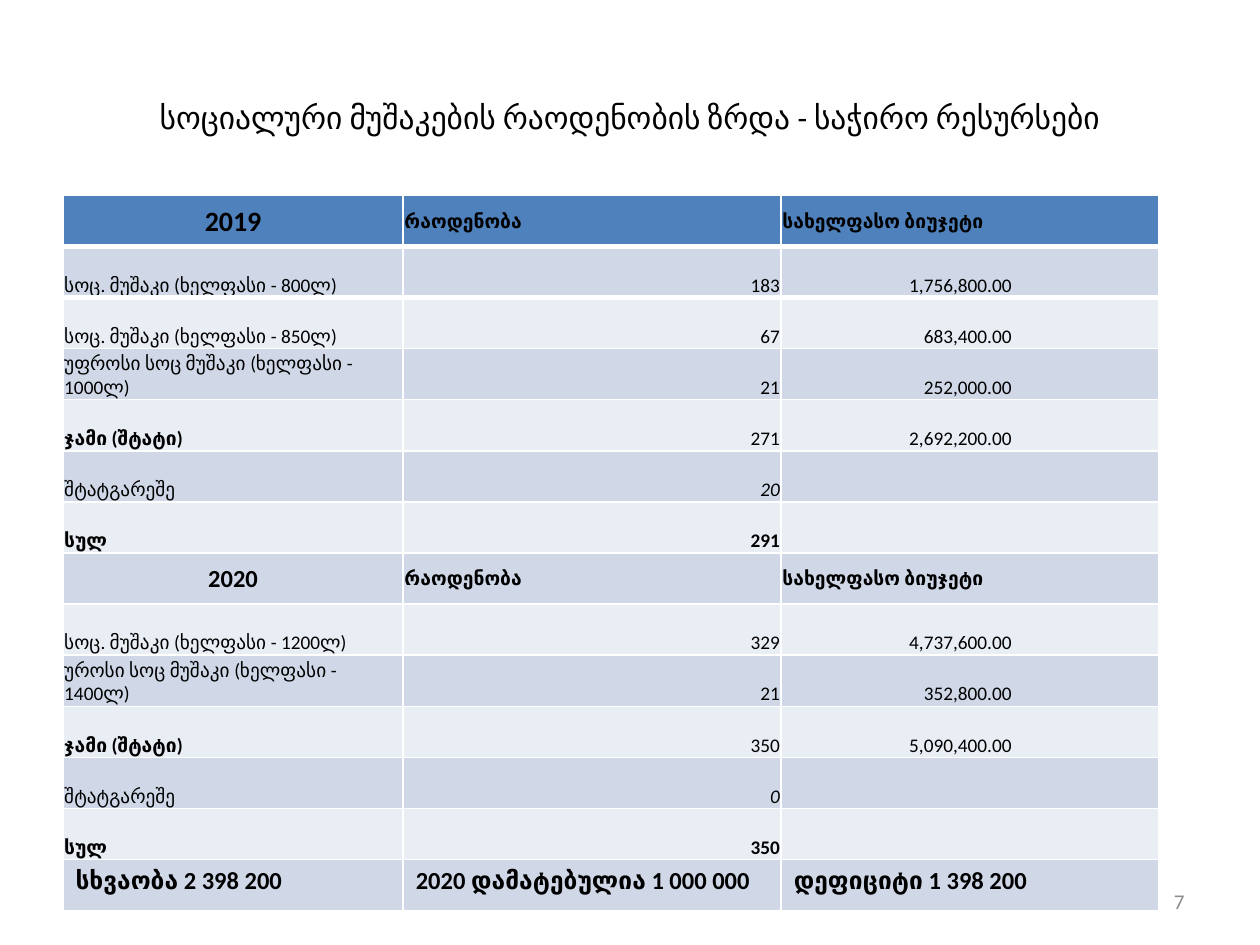
from dataclasses import dataclass

from lxml.etree import SubElement
from pptx import Presentation
from pptx.dml.color import RGBColor
from pptx.enum.text import MSO_ANCHOR, PP_ALIGN
from pptx.oxml import parse_xml
from pptx.oxml.ns import nsdecls, qn
from pptx.util import Inches, Pt


@dataclass(frozen=True)
class Theme:
    """Colours and type sizes of the slide."""
    font: str = "Calibri"
    text: str = "000000"
    muted: str = "8C8C8C"
    header: str = "4F81BD"
    bands: tuple = ("E9EDF4", "D0D8E8")
    rule: str = "FFFFFF"
    title_size: int = 18
    year_size: int = 16
    section_size: int = 14
    number_size: int = 12
    body_size: int = 11


THEME = Theme()
COLUMN_WIDTHS = (2.7, 3, 3)
AMOUNT_INDENT = 1.17
HEADINGS = ("რაოდენობა", "სახელფასო ბიუჯეტი")
ROWS = [
    ("year", "2019", *HEADINGS),
    ("staff", "სოც. მუშაკი (ხელფასი - 800ლ)", "183", "1,756,800.00"),
    ("staff", "სოც. მუშაკი (ხელფასი - 850ლ)", "67", "683,400.00"),
    ("staff", "უფროსი სოც მუშაკი (ხელფასი - 1000ლ)", "21", "252,000.00"),
    ("subtotal", "ჯამი (შტატი)", "271", "2,692,200.00"),
    ("external", "შტატგარეშე", "20", ""),
    ("total", "სულ", "291", ""),
    ("year", "2020", *HEADINGS),
    ("staff", "სოც. მუშაკი (ხელფასი - 1200ლ)", "329", "4,737,600.00"),
    ("staff", "უროსი სოც მუშაკი (ხელფასი - 1400ლ)", "21", "352,800.00"),
    ("subtotal", "ჯამი (შტატი)", "350", "5,090,400.00"),
    ("external", "შტატგარეშე", "0", ""),
    ("total", "სულ", "350", ""),
    ("summary", "სხვაობა 2 398 200", "2020 დამატებულია 1 000 000", "დეფიციტი 1 398 200"),
]


def write(frame, text, size, color=THEME.text, align=PP_ALIGN.LEFT, bold=False, italic=False):
    """Put one formatted paragraph into a text frame."""
    paragraph = frame.paragraphs[0]
    paragraph.text = text
    paragraph.alignment = align
    font = paragraph.font
    font.name, font.size = THEME.font, Pt(size)
    font.bold, font.italic = bold, italic
    font.color.rgb = RGBColor.from_string(color)


def add_title(slide, text):
    """Place and format the title placeholder."""
    title = slide.shapes.title
    title.left, title.top = Inches(0.5), Inches(0.3)
    title.width, title.height = Inches(9), Inches(1.25)
    title.text_frame.vertical_anchor = MSO_ANCHOR.MIDDLE
    write(title.text_frame, text, THEME.title_size, align=PP_ALIGN.CENTER)


def add_slide_number(slide, number):
    """Add the slide number at the lower right."""
    box = slide.shapes.add_textbox(Inches(7.17), Inches(6.95), Inches(2.33), Inches(0.4))
    box.text_frame.word_wrap = True
    box.text_frame.vertical_anchor = MSO_ANCHOR.MIDDLE
    write(box.text_frame, number, THEME.number_size, THEME.muted, PP_ALIGN.RIGHT)


def set_border(cell, side, width):
    """Draw one cell border in the rule colour."""
    line = parse_xml(f'<a:{side} {nsdecls("a")} w="{Pt(width)}"/>')
    fill = SubElement(line, qn("a:solidFill"))
    SubElement(fill, qn("a:srgbClr"), val=THEME.rule)
    cell._tc.get_or_add_tcPr().insert(0, line)


def fill_cell(cell, kind, row, column, text):
    """Fill and format a table cell by its row kind and column."""
    cell.fill.solid()
    color = THEME.bands[row % 2] if row else THEME.header
    if kind == "summary":
        color = THEME.bands[1]
    cell.fill.fore_color.rgb = RGBColor.from_string(color)
    size, align = THEME.body_size, PP_ALIGN.LEFT
    bold = kind in ("year", "summary")
    if kind == "summary":
        size = THEME.section_size
    else:
        cell.margin_left = cell.margin_right = cell.margin_top = Inches(0.01)
        cell.margin_bottom = 0
        cell.vertical_anchor = MSO_ANCHOR.MIDDLE if kind == "year" else MSO_ANCHOR.BOTTOM
        if kind != "year":
            align = PP_ALIGN.RIGHT if column else PP_ALIGN.LEFT
            bold = (kind == "total" and column < 2) or (kind == "subtotal" and column == 0)
            if column == 2:
                cell.margin_right = Inches(AMOUNT_INDENT)
        elif column == 0:
            size = THEME.section_size if row else THEME.year_size
            align = PP_ALIGN.CENTER
    write(cell.text_frame, text, size, align=align, bold=bold,
          italic=kind == "external" and column == 1)


def add_budget_table(slide):
    """Add the staff and salary budget table."""
    table = slide.shapes.add_table(len(ROWS), len(COLUMN_WIDTHS), Inches(0.5), Inches(1.55),
                                   Inches(sum(COLUMN_WIDTHS)), Inches(5.68)).table
    table.first_row = table.horz_banding = False
    for column, width in zip(table.columns, COLUMN_WIDTHS):
        column.width = Inches(width)
    for row, (kind, *texts) in enumerate(ROWS):
        for column, text in enumerate(texts):
            fill_cell(table.cell(row, column), kind, row, column, text)
    for column in range(len(COLUMN_WIDTHS)):
        set_border(table.cell(0, column), "lnB", 3)
        set_border(table.cell(1, column), "lnT", 3)


def main():
    """Build and save the slide."""
    presentation = Presentation()
    presentation.slide_width, presentation.slide_height = Inches(10), Inches(7.5)
    slide = presentation.slides.add_slide(presentation.slide_layouts[5])
    add_title(slide, "სოციალური მუშაკების რაოდენობის ზრდა - საჭირო რესურსები")
    add_slide_number(slide, "7")
    add_budget_table(slide)
    presentation.save("out.pptx")


if __name__ == "__main__":
    main()
